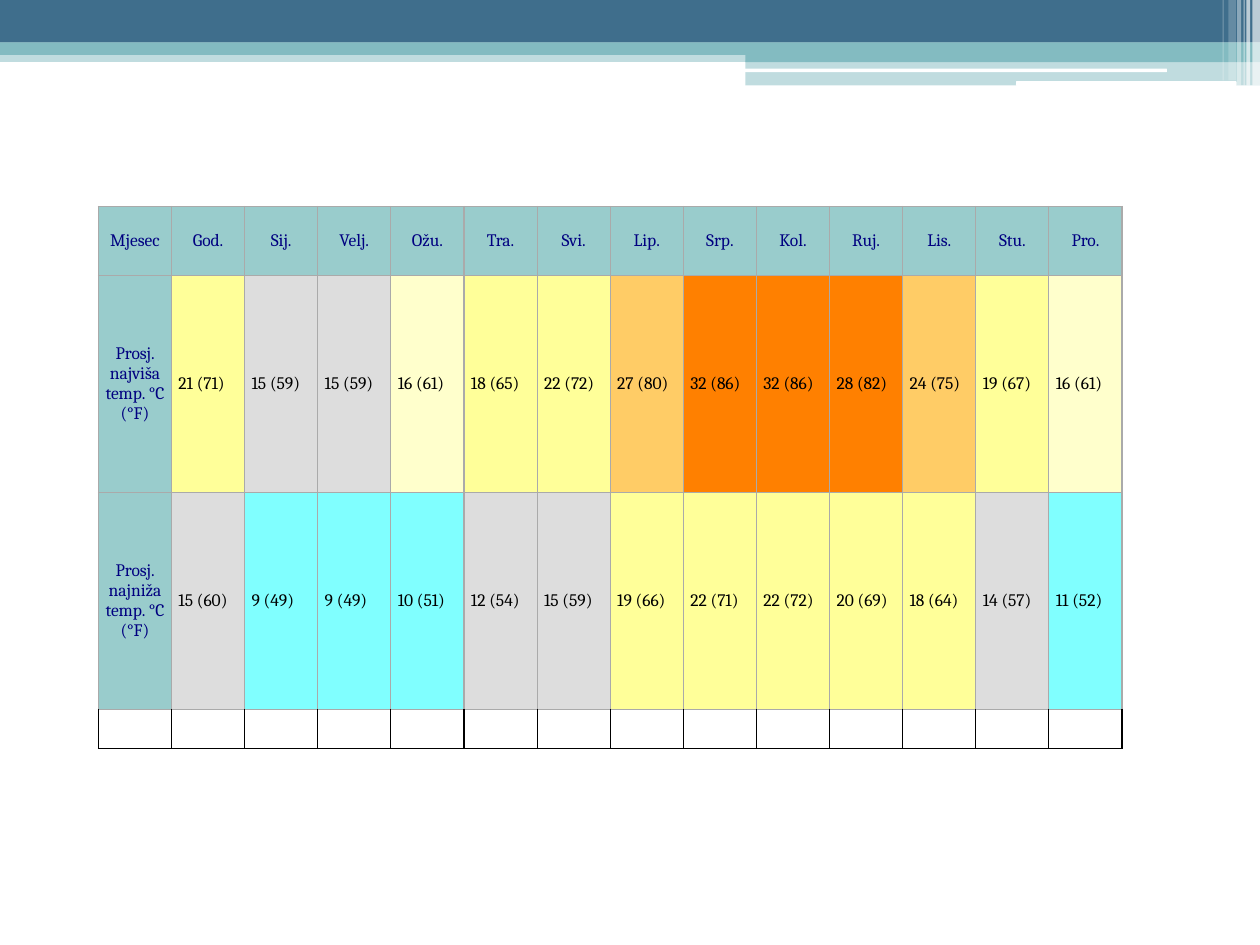
from dataclasses import dataclass

import pptx
import pptx.dml.color
import pptx.enum.shapes
import pptx.enum.text
import pptx.oxml
import pptx.oxml.ns
import pptx.util
from lxml import etree

Pt = pptx.util.Pt
qn = pptx.oxml.ns.qn
Shape = pptx.enum.shapes.MSO_SHAPE
Align = pptx.enum.text.PP_ALIGN

COLORS = {
    "navy": "3F6E8C", "teal": "83BBC1", "white": "FFFFFF", "black": "000000",
    "heading": "99CCCC", "heading_text": "000080", "grid": "AAAAAA",
    "hot": "FF8000", "warm": "FFCC66", "mild": "FFFF99",
    "fresh": "FFFFCC", "cool": "DDDDDD", "cold": "80FFFF",
}
# Lowest temperature in °C of each colour band, hottest first
BANDS = [(28, "hot"), (24, "warm"), (18, "mild"), (16, "fresh"), (12, "cool")]

MONTHS = ["Mjesec", "God.", "Sij.", "Velj.", "Ožu.", "Tra.", "Svi.", "Lip.",
          "Srp.", "Kol.", "Ruj.", "Lis.", "Stu.", "Pro."]
HIGHS = ["Prosj. najviša temp. °C (°F)", "21 (71)", "15 (59)", "15 (59)",
         "16 (61)", "18 (65)", "22 (72)", "27 (80)", "32 (86)", "32 (86)",
         "28 (82)", "24 (75)", "19 (67)", "16 (61)"]
LOWS = ["Prosj. najniža temp. °C (°F)", "15 (60)", "9 (49)", "9 (49)",
        "10 (51)", "12 (54)", "15 (59)", "19 (66)", "22 (71)", "22 (72)",
        "20 (69)", "18 (64)", "14 (57)", "11 (52)"]
ROWS = [MONTHS, HIGHS, LOWS, [""] * len(MONTHS)]
ROW_HEIGHTS = [39.4, 124, 124, 22.3]
COLUMN_WIDTH = 41.8

CELL_FORMAT = {
    "margin_left": Pt(4), "margin_right": Pt(4),
    "margin_top": Pt(2), "margin_bottom": Pt(2),
    "vertical_anchor": pptx.enum.text.MSO_ANCHOR.MIDDLE,
}
FONT_FORMAT = {"size": Pt(10), "name": "Cambria", "bold": False}


@dataclass
class Band:
    left: float
    top: float
    width: float
    height: float
    color: str
    opacity: int = 100
    rounded: bool = False


BANNER = [
    Band(0, 28.8, 720, 6.6, "teal", 50),
    Band(0, 0, 720, 24.4, "navy"),
    Band(0, 24.2, 720, 7.2, "teal"),
    Band(426, 28.4, 294, 7.2, "teal"),
    Band(426, 34.6, 294, 14.2, "teal", 50),
    Band(425.6, 39.2, 241.2, 2, "white", rounded=True),
    Band(580.6, 46.4, 126, 2.7, "white", rounded=True),
    # Light stripes at the right edge
    Band(715.7, 0, 4.3, 49, "white", 65),
    Band(712.2, 0, 2.2, 49, "white", 65),
    Band(710.6, 0, 0.7, 49, "white", 60),
    Band(707, 0, 2.2, 49, "white", 40),
    Band(702, 0, 4.3, 46, "white", 20),
    Band(698.6, 0, 0.7, 46, "white", 30),
]


def rgb(color: str) -> pptx.dml.color.RGBColor:
    return pptx.dml.color.RGBColor.from_string(COLORS[color])


def apply_format(target: object, values: dict) -> None:
    for attribute, value in values.items():
        setattr(target, attribute, value)


def draw_band(slide: object, band: Band) -> None:
    preset = Shape.ROUNDED_RECTANGLE if band.rounded else Shape.RECTANGLE
    strip = slide.shapes.add_shape(
        preset, Pt(band.left), Pt(band.top), Pt(band.width), Pt(band.height))
    strip.shadow.inherit = False
    strip.line.fill.background()
    strip.fill.solid()
    strip.fill.fore_color.rgb = rgb(band.color)
    if band.opacity < 100:
        fill_color = strip.fill._xPr.find(".//" + qn("a:srgbClr"))
        etree.SubElement(fill_color, qn("a:alpha"), val=str(band.opacity * 1000))


def temperature_color(reading: str) -> str:
    celsius = int(reading.split()[0])
    return next((color for lowest, color in BANDS if celsius >= lowest), "cold")


def draw_borders(cell: object, sides: dict[str, str]) -> None:
    properties = cell._tc.get_or_add_tcPr()
    for position, (side, color) in enumerate(sides.items()):
        properties.insert(position, pptx.oxml.parse_xml(
            '<a:ln%s xmlns:a="http://schemas.openxmlformats.org/drawingml/2006/main"'
            ' w="9525"><a:solidFill><a:srgbClr val="%s"/></a:solidFill></a:ln%s>'
            % (side, COLORS[color], side)))


def fill_cell(cell: object, text: str, is_heading: bool) -> None:
    apply_format(cell, CELL_FORMAT)
    paragraph = cell.text_frame.paragraphs[0]
    if text:
        label = paragraph.add_run()
        label.text = text
        apply_format(label.font, FONT_FORMAT)
        label.font.color.rgb = rgb("heading_text" if is_heading else "black")
        paragraph.alignment = Align.CENTER if is_heading else Align.LEFT
        cell.fill.solid()
        cell.fill.fore_color.rgb = rgb(
            "heading" if is_heading else temperature_color(text))
    else:
        paragraph._p.get_or_add_endParaRPr().set("sz", "1000")
        cell.fill.background()
    edge = "grid" if text else "black"
    draw_borders(cell, {"L": edge, "R": edge, "T": "grid", "B": edge})


def draw_climate_table(slide: object) -> None:
    climate = slide.shapes.add_table(
        len(ROWS), len(MONTHS), Pt(56.2), Pt(118),
        Pt(COLUMN_WIDTH * len(MONTHS)), Pt(sum(ROW_HEIGHTS))).table
    apply_format(climate, {"first_row": False, "horz_banding": False})
    for column in climate.columns:
        column.width = Pt(COLUMN_WIDTH)
    for row, (texts, height) in enumerate(zip(ROWS, ROW_HEIGHTS)):
        climate.rows[row].height = Pt(height)
        for column, text in enumerate(texts):
            fill_cell(climate.cell(row, column), text, row == 0 or column == 0)


def main() -> None:
    presentation = pptx.Presentation()
    apply_format(presentation, {"slide_width": Pt(720), "slide_height": Pt(540)})
    slide = presentation.slides.add_slide(presentation.slide_layouts[6])

    # Banner along the top
    for band in BANNER:
        draw_band(slide, band)

    # Monthly temperatures
    draw_climate_table(slide)
    presentation.save("out.pptx")


if __name__ == "__main__":
    main()
